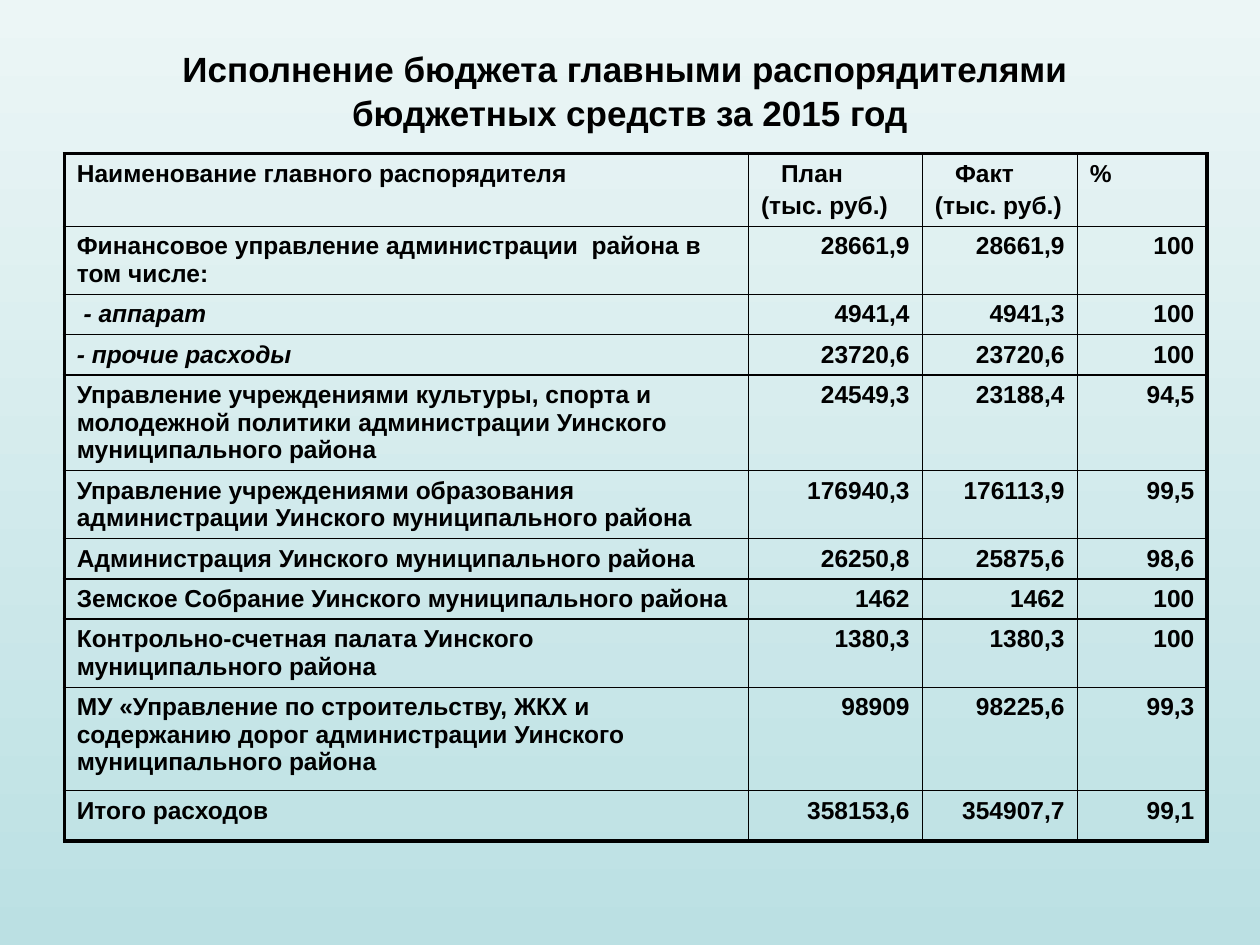
from lxml import etree
from pptx import Presentation
from pptx.dml.color import RGBColor
from pptx.enum.text import MSO_ANCHOR, PP_ALIGN
from pptx.oxml.ns import qn
from pptx.util import Inches, Pt

LEFT, CENTER, RIGHT = PP_ALIGN.LEFT, PP_ALIGN.CENTER, PP_ALIGN.RIGHT
BLACK = RGBColor(0x00, 0x00, 0x00)
SKY_TOP = RGBColor(0xEC, 0xF6, 0xF6)
SKY_BOTTOM = RGBColor(0xBB, 0xE0, 0xE3)
OUTER, INNER = 2.25, 1

TITLE = ["Исполнение бюджета главными распорядителями ",
         "бюджетных средств за 2015 год"]
HEADER = ["Наименование главного распорядителя",
          "План\n(тыс. руб.)", "Факт\n(тыс. руб.)", "%"]
BUDGET = [
    ("Финансовое управление администрации  района в том числе:",
     "28661,9", "28661,9", "100"),
    (" - аппарат", "4941,4", "4941,3", "100"),
    ("- прочие расходы", "23720,6", "23720,6", "100"),
    ("Управление учреждениями культуры, спорта и молодежной политики "
     "администрации Уинского муниципального района",
     "24549,3", "23188,4", "94,5"),
    ("Управление учреждениями образования администрации Уинского "
     "муниципального района", "176940,3", "176113,9", "99,5"),
    ("Администрация Уинского муниципального района",
     "26250,8", "25875,6", "98,6"),
    ("Земское Собрание Уинского муниципального района",
     "1462", "1462", "100"),
    ("Контрольно-счетная палата Уинского муниципального района",
     "1380,3", "1380,3", "100"),
    ("МУ «Управление по строительству, ЖКХ и содержанию дорог "
     "администрации Уинского муниципального района",
     "98909", "98225,6", "99,3"),
    ("Итого расходов", "358153,6", "354907,7", "99,1"),
]
COL_WIDTHS = [5.43, 1.38, 1.23, 1.03]
ROW_HEIGHTS = [0.57, 0.54, 0.32, 0.32, 0.76, 0.54, 0.32, 0.32, 0.54, 0.82, 0.4]


def write(tf, lines, size=14, align=LEFT, italic=False, gap=0):
    """Fill a text frame, one paragraph a line, with gap points between."""
    for i, line in enumerate(lines):
        p = tf.add_paragraph() if i else tf.paragraphs[0]
        p.alignment = align
        p.space_before = Pt(gap if i else 0)
        r = p.add_run()
        r.text = line
        r.font.name, r.font.size = "Arial", Pt(size)
        r.font.bold, r.font.italic = True, italic
        r.font.color.rgb = BLACK


def set_borders(cell, widths):
    """Draw black borders; widths are points for left, right, top, bottom."""
    tc_pr = cell._tc.get_or_add_tcPr()
    for i, (side, width) in enumerate(zip("LRTB", widths)):
        ln = etree.Element(qn(f"a:ln{side}"), w=str(Pt(width)))
        fill = etree.SubElement(ln, qn("a:solidFill"))
        etree.SubElement(fill, qn("a:srgbClr"), val=str(BLACK))
        tc_pr.insert(i, ln)


def add_title(s):
    title = s.shapes.title
    title.left, title.top = Inches(0.5), Inches(0.3)
    title.width, title.height = Inches(9), Inches(1.25)
    tf = title.text_frame
    tf.vertical_anchor = MSO_ANCHOR.TOP
    tf.margin_top = Inches(0.08)
    write(tf, TITLE, size=20, align=CENTER, gap=1)


def add_budget_table(s):
    rows = [HEADER] + BUDGET
    last_row, last_col = len(rows) - 1, len(HEADER) - 1
    table = s.shapes.add_table(
        len(rows), len(HEADER), Inches(0.51), Inches(1.22),
        Inches(sum(COL_WIDTHS)), Inches(sum(ROW_HEIGHTS))).table
    table.first_row = table.horz_banding = False
    for col, width in zip(table.columns, COL_WIDTHS):
        col.width = Inches(width)
    for row, height in zip(table.rows, ROW_HEIGHTS):
        row.height = Inches(height)

    for i, row in enumerate(rows):
        for j, text in enumerate(row):
            cell = table.cell(i, j)
            cell.fill.background()
            write(cell.text_frame, text.split("\n"), gap=2.8,
                  align=RIGHT if i and j else LEFT,
                  italic=text.strip().startswith("-"))
            if "\n" in text:
                p_pr = cell.text_frame.paragraphs[0]._p.get_or_add_pPr()
                p_pr.set("marL", str(Inches(0.16)))
            edges = (j == 0, j == last_col, i == 0, i == last_row)
            set_borders(cell, [OUTER if edge else INNER for edge in edges])


def main():
    prs = Presentation()
    prs.slide_width, prs.slide_height = Inches(10), Inches(7.5)
    s = prs.slides.add_slide(prs.slide_layouts[5])
    fill = s.background.fill
    fill.gradient()
    fill.gradient_angle = 270
    for stop, color in zip(fill.gradient_stops, (SKY_TOP, SKY_BOTTOM)):
        stop.color.rgb = color
    add_title(s)
    add_budget_table(s)
    prs.save("out.pptx")


if __name__ == "__main__":
    main()
